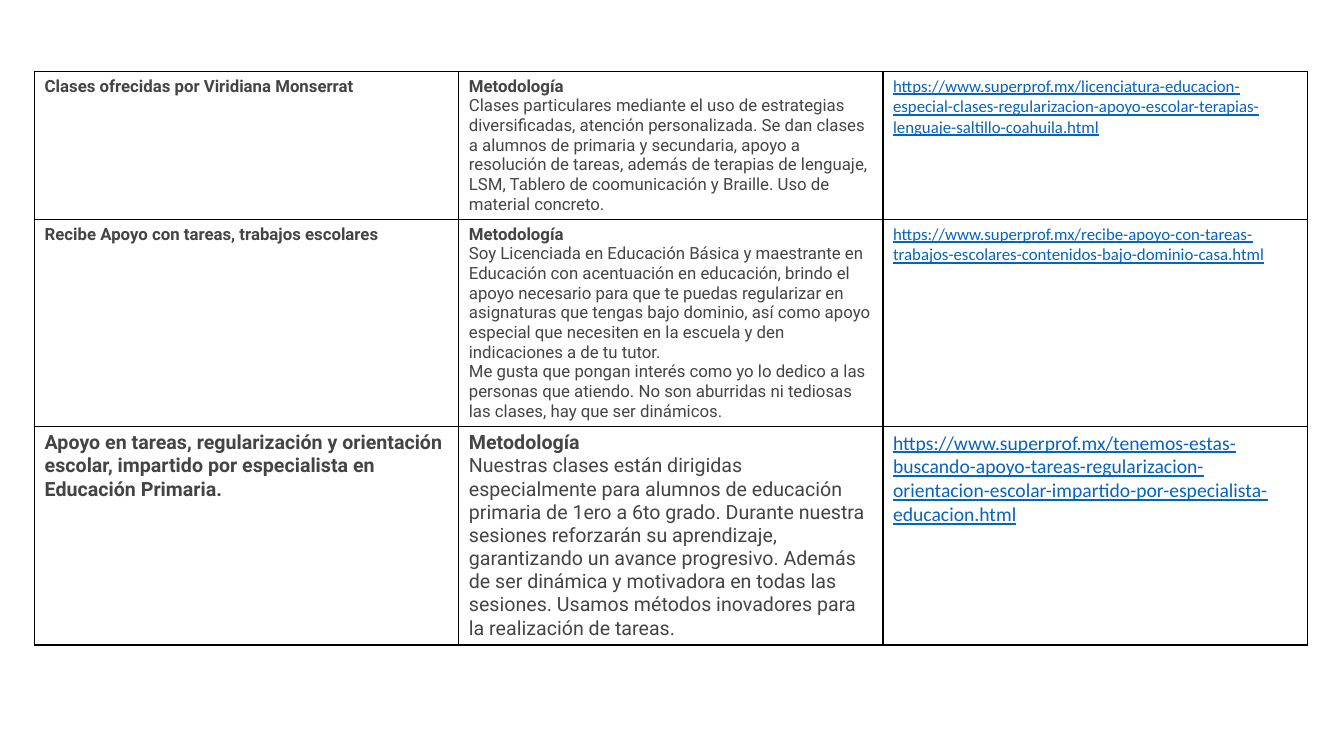
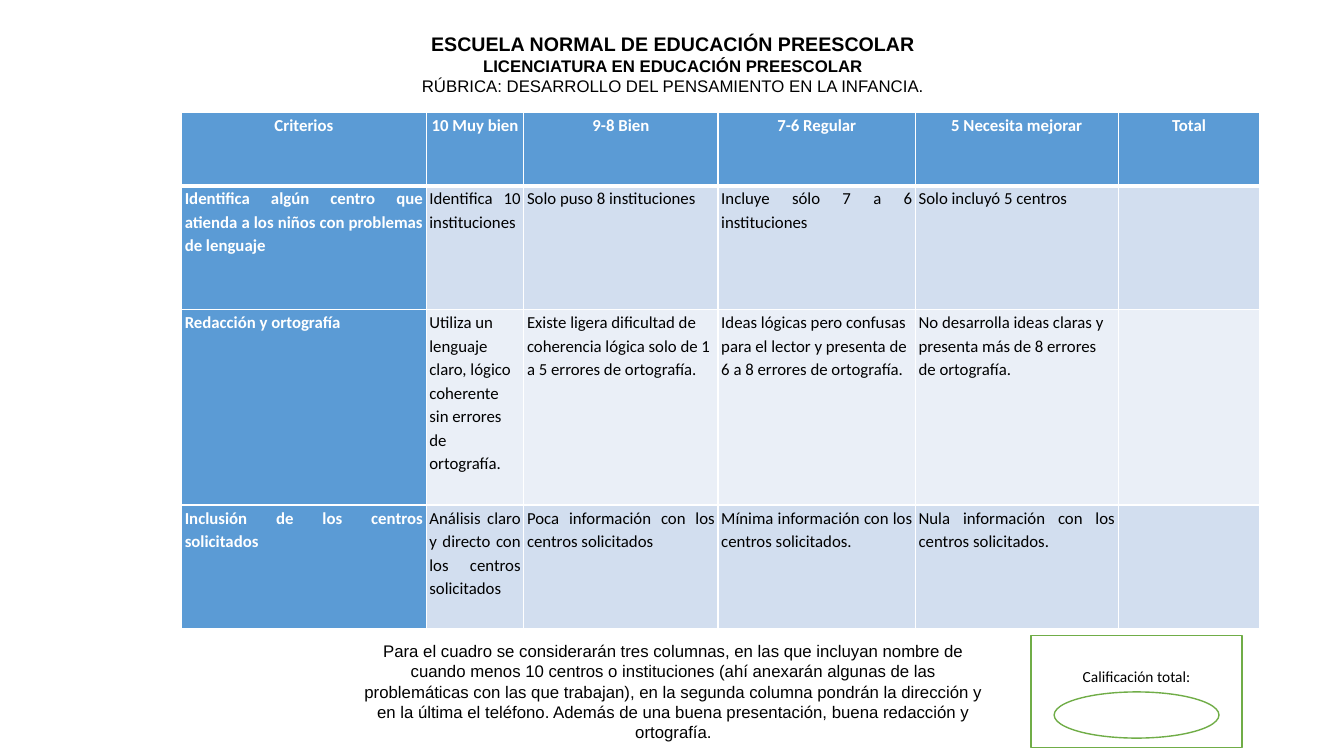
import pptx
import pptx.util
import pptx.dml.color
import pptx.enum.shapes
import pptx.enum.text
import pptx.oxml

PX = 9525
BLUE, PALE, LIGHT = "5B9BD5", "D2DEEF", "EAEFF7"
GREEN, GRAY, LINK = "70AD47", "444444", "0563C1"
BLACK, WHITE = "000000", "FFFFFF"
ALIGN = pptx.enum.text.PP_ALIGN
ANCHOR = pptx.enum.text.MSO_ANCHOR
SHAPE = pptx.enum.shapes.MSO_SHAPE
NS = 'xmlns:a="http://schemas.openxmlformats.org/drawingml/2006/main"'
tint = pptx.dml.color.RGBColor.from_string


def set_font(par, name, size, color, bold=False):
    par.font.name, par.font.size = name, pptx.util.Pt(size)
    par.font.bold, par.font.color.rgb = bold, tint(color)


def add_grid(slide, left, top, cols, rows, color, head=1):
    """Add a plain table with 1 pt borders; head is the width in pt below the first row."""
    frame = slide.shapes.add_table(len(rows), len(cols), left * PX, top * PX,
                                   sum(cols) * PX, sum(rows) * PX)
    table = frame.table
    table.first_row = table.horz_banding = False
    for col, width in zip(table.columns, cols):
        col.width = width * PX
    for r, height in enumerate(rows):
        table.rows[r].height = height * PX
        for cell in table.rows[r].cells:
            props = cell._tc.get_or_add_tcPr()
            for side in "LRTB":
                wide = head if (r, side) in ((0, "B"), (1, "T")) else 1
                props.append(pptx.oxml.parse_xml(
                    f'<a:ln{side} {NS} w="{wide * 12700}"><a:solidFill>'
                    f'<a:srgbClr val="{color}"/></a:solidFill></a:ln{side}>'))
            cell.fill.background()
    return table


deck = pptx.Presentation()
deck.slide_width, deck.slide_height = 1280 * PX, 720 * PX

# Slide 1: classes on offer
slide = deck.slides.add_slide(deck.slide_layouts[6])
offers = [
    (12, "Clases ofrecidas por Viridiana Monserrat",
     "Clases particulares mediante el uso de estrategias diversificadas, atención "
     "personalizada. Se dan clases a alumnos de primaria y secundaria, apoyo a resolución "
     "de tareas, además de terapias de lenguaje, LSM, Tablero de coomunicación y Braille. "
     "Uso de material concreto.",
     "https://www.superprof.mx/licenciatura-educacion-especial-clases-regularizacion-"
     "apoyo-escolar-terapias-lenguaje-saltillo-coahuila.html"),
    (12, "Recibe Apoyo con tareas, trabajos escolares",
     "Soy Licenciada en Educación Básica y maestrante en Educación con acentuación en "
     "educación, brindo el apoyo necesario para que te puedas regularizar en asignaturas "
     "que tengas bajo dominio, así como apoyo especial que necesiten en la escuela y den "
     "indicaciones a de tu tutor.\nMe gusta que pongan interés como yo lo dedico a las "
     "personas que atiendo. No son aburridas ni tediosas las clases, hay que ser dinámicos.",
     "https://www.superprof.mx/recibe-apoyo-con-tareas-trabajos-escolares-contenidos-"
     "bajo-dominio-casa.html"),
    (14, "Apoyo en tareas, regularización y orientación escolar, impartido por "
     "especialista en Educación Primaria.",
     "Nuestras clases están dirigidas especialmente para alumnos de educación primaria de "
     "1ero a 6to grado. Durante nuestra sesiones reforzarán su aprendizaje, garantizando un "
     "avance progresivo. Además de ser dinámica y motivadora en todas las sesiones. Usamos "
     "métodos inovadores para la realización de tareas.",
     "https://www.superprof.mx/tenemos-estas-buscando-apoyo-tareas-regularizacion-"
     "orientacion-escolar-impartido-por-especialista-educacion.html"),
]
table = add_grid(slide, 33, 68, [404] * 3, [141, 197, 208], BLACK)
for r, (size, name, method, link) in enumerate(offers):
    par = table.cell(r, 0).text_frame.paragraphs[0]
    par.text = name
    set_font(par, "Roboto", size, GRAY, True)
    frame = table.cell(r, 1).text_frame
    par = frame.paragraphs[0]
    par.text = "Metodología"
    set_font(par, "Roboto", size, GRAY, True)
    par = frame.add_paragraph()
    par.text = method
    set_font(par, "Roboto", size, GRAY)
    par = table.cell(r, 2).text_frame.paragraphs[0]
    par.text = link
    set_font(par, "Calibri", size, LINK)
    par.font.underline = True

# Slide 2: rubric
slide = deck.slides.add_slide(deck.slide_layouts[5])
title = slide.shapes.title
title.left, title.top, title.width, title.height = 350 * PX, 26 * PX, 582 * PX, 76 * PX
frame = title.text_frame
frame.auto_size = pptx.enum.text.MSO_AUTO_SIZE.NONE
frame.vertical_anchor = ANCHOR.TOP
heads = [("ESCUELA NORMAL DE EDUCACIÓN PREESCOLAR", 14, True),
         ("LICENCIATURA EN EDUCACIÓN PREESCOLAR", 12, True),
         ("RÚBRICA: DESARROLLO DEL PENSAMIENTO EN LA INFANCIA.", 12, False)]
for i, (text, size, bold) in enumerate(heads):
    par = frame.add_paragraph() if i else frame.paragraphs[0]
    par.text, par.alignment = text, ALIGN.CENTER
    set_font(par, "Arial", size, BLACK, bold)

rubric = [
    (BLUE, ALIGN.CENTER,
     ["Criterios", "10 Muy bien", "9-8 Bien", "7-6 Regular", "5 Necesita mejorar", "Total"]),
    (PALE, ALIGN.JUSTIFY,
     ["Identifica algún centro que atienda a los niños con problemas de lenguaje",
      "Identifica 10 instituciones", "Solo puso 8 instituciones",
      "Incluye sólo 7 a 6 instituciones", "Solo incluyó 5 centros", ""]),
    (LIGHT, ALIGN.LEFT,
     ["Redacción y ortografía",
      "Utiliza un lenguaje claro, lógico coherente sin errores de ortografía.",
      "Existe ligera dificultad de coherencia lógica solo de 1 a 5 errores de ortografía.",
      "Ideas lógicas pero confusas para el lector y presenta de 6 a 8 errores de ortografía.",
      "No desarrolla ideas claras y presenta más de 8 errores de ortografía.", ""]),
    (PALE, ALIGN.JUSTIFY,
     ["Inclusión de los centros solicitados",
      "Análisis claro y directo con los centros solicitados",
      "Poca información con los centros solicitados",
      "Mínima información con los centros solicitados.",
      "Nula información con los centros solicitados.", ""]),
]
table = add_grid(slide, 173, 107, [233, 93, 185, 188, 193, 135], [70, 118, 186, 118], WHITE, 3)
for r, (fill, align, texts) in enumerate(rubric):
    for c, text in enumerate(texts):
        cell = table.cell(r, c)
        cell.margin_left = cell.margin_right = 3 * PX
        cell.margin_top = cell.margin_bottom = 0
        key = r == 0 or c == 0
        cell.fill.solid()
        cell.fill.fore_color.rgb = tint(BLUE if key else fill)
        if text:
            par = cell.text_frame.paragraphs[0]
            par.text, par.alignment, par.line_spacing = text, align, 1.15
            set_font(par, "Calibri", 12, WHITE if key else BLACK, key)

for kind, left, top, width, height, text in [
        (SHAPE.RECTANGLE, 982, 605, 201, 107, "Calificación total:"),
        (SHAPE.OVAL, 1004, 659, 157, 44, "")]:
    shape = slide.shapes.add_shape(kind, left * PX, top * PX, width * PX, height * PX)
    shape.shadow.inherit = False
    shape.fill.solid()
    shape.fill.fore_color.rgb = tint(WHITE)
    shape.line.color.rgb = tint(GREEN)
    shape.line.width = pptx.util.Pt(1)
    if text:
        frame = shape.text_frame
        frame.vertical_anchor, frame.margin_top = ANCHOR.TOP, 30 * PX
        par = frame.paragraphs[0]
        par.text, par.alignment = text, ALIGN.CENTER
        set_font(par, "Calibri", 11, BLACK)

note = slide.shapes.add_textbox(336 * PX, 605 * PX, 611 * PX, 107 * PX)
frame = note.text_frame
frame.word_wrap, frame.vertical_anchor = True, ANCHOR.MIDDLE
par = frame.paragraphs[0]
par.text = ("Para el cuadro se considerarán tres columnas, en las que incluyan nombre de cuando "
            "menos 10 centros o instituciones (ahí anexarán algunas de las problemáticas con las "
            "que trabajan), en la segunda columna pondrán la dirección y en la última el "
            "teléfono. Además de una buena presentación, buena redacción y ortografía.")
par.alignment = ALIGN.CENTER
set_font(par, "Arial", 12, BLACK)

deck.save("out.pptx")
